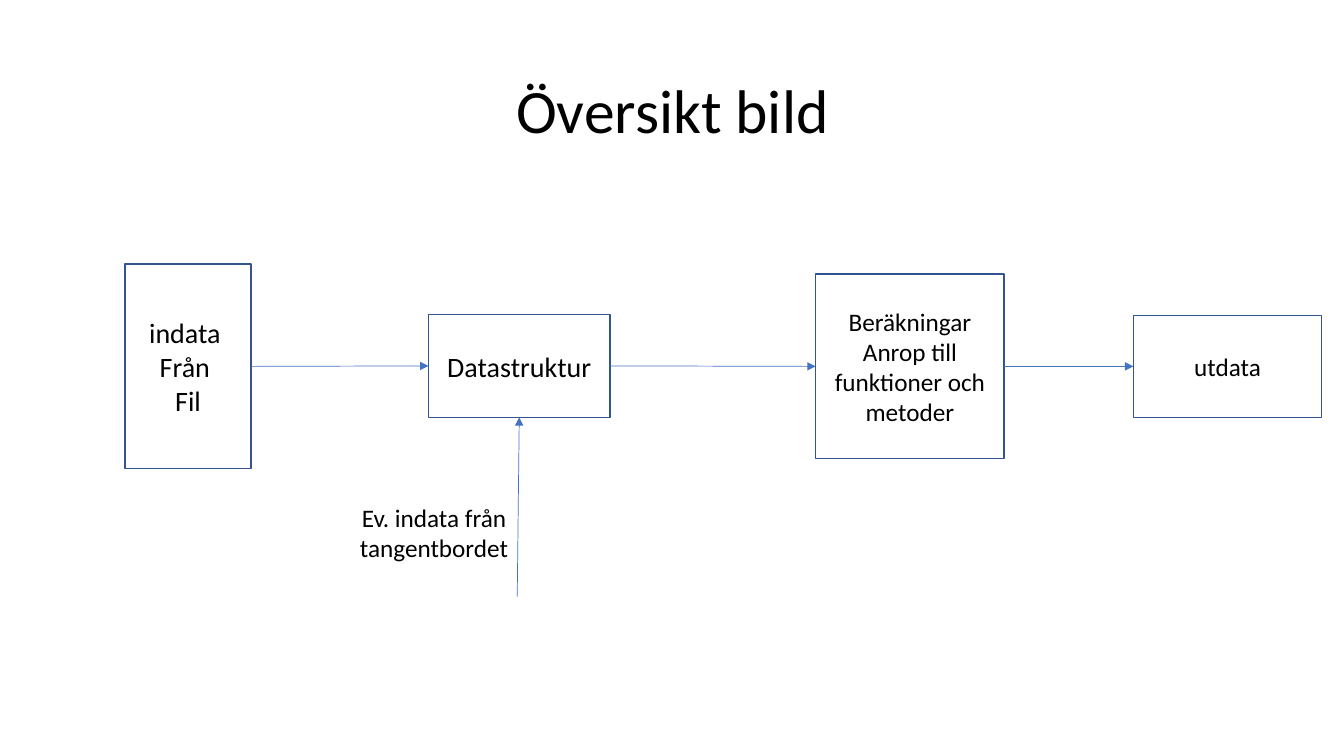
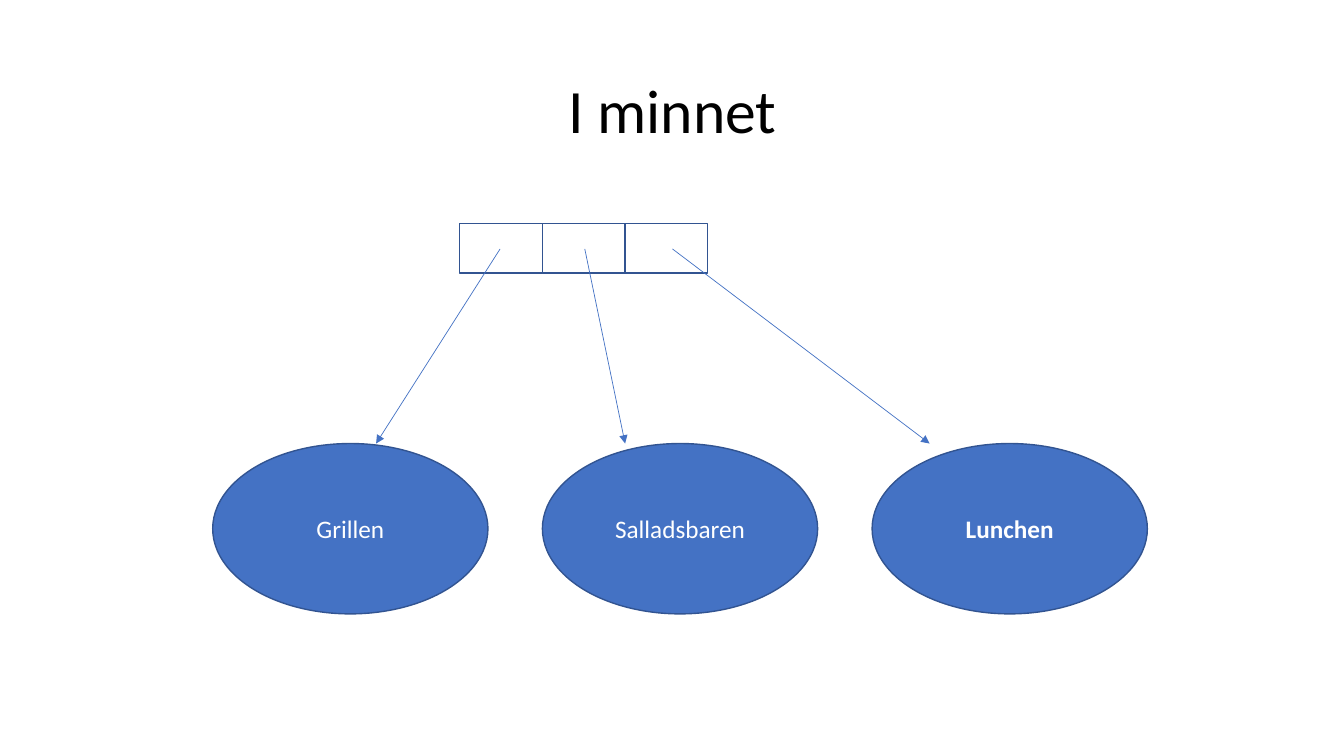
from dataclasses import dataclass
from typing import Any, Optional

import pptx
import pptx.dml.color
import pptx.enum.shapes
import pptx.enum.text
import pptx.oxml.ns
import pptx.util
from lxml import etree

# Shared scale, colours and font
PX = 9144  # 100 px to the inch
FONT = "Calibri"
BLACK, WHITE = "000000", "FFFFFF"
BLUE, NAVY = "4472C4", "325491"
RECT = pptx.enum.shapes.MSO_SHAPE.RECTANGLE
OVAL = pptx.enum.shapes.MSO_SHAPE.OVAL
LEFT_SITE, BOTTOM_SITE, RIGHT_SITE = 1, 2, 3


@dataclass(frozen=True)
class Node:
    x: int
    y: int
    w: int
    h: int
    text: str = ""
    size: int = 18
    bold: bool = False
    kind: Any = RECT
    fill: Optional[str] = None
    color: str = BLACK


def px(n: int) -> pptx.util.Emu:
    return pptx.util.Emu(n * PX)


def rgb(color: str) -> pptx.dml.color.RGBColor:
    return pptx.dml.color.RGBColor.from_string(color)


def format_text(tf: Any, size: int, color: str, bold: bool = False) -> None:
    tf.word_wrap = True
    tf.vertical_anchor = pptx.enum.text.MSO_ANCHOR.MIDDLE
    for p in tf.paragraphs:
        p.alignment = pptx.enum.text.PP_ALIGN.CENTER
        for r in p.runs:
            r.font.name = FONT
            r.font.size = pptx.util.Pt(size)
            r.font.bold = bold
            r.font.color.rgb = rgb(color)


def add_titled_slide(prs: Any, title: str) -> Any:
    s = prs.slides.add_slide(prs.slide_layouts[5])
    sp = s.shapes.title
    sp.left, sp.top, sp.width, sp.height = map(px, (92, 40, 1150, 145))
    sp.text_frame.text = title
    format_text(sp.text_frame, 44, BLACK)
    sp.text_frame.paragraphs[0].line_spacing = 0.9
    return s


def add_node(s: Any, node: Node) -> Any:
    sp = s.shapes.add_shape(node.kind, px(node.x), px(node.y), px(node.w), px(node.h))
    sp.shadow.inherit = False
    if node.fill:
        sp.fill.solid()
        sp.fill.fore_color.rgb = rgb(node.fill)
    else:
        sp.fill.background()
    sp.line.color.rgb = rgb(NAVY)
    sp.line.width = pptx.util.Pt(1)
    sp.text_frame.text = node.text
    format_text(sp.text_frame, node.size, node.color, node.bold)
    return sp


def add_arrow(s: Any, x1: int = 0, y1: int = 0, x2: int = 0, y2: int = 0) -> Any:
    straight = pptx.enum.shapes.MSO_CONNECTOR.STRAIGHT
    line = s.shapes.add_connector(straight, px(x1), px(y1), px(x2), px(y2))
    line.line.color.rgb = rgb(BLUE)
    line.line.width = pptx.util.Pt(0.5)
    qn = pptx.oxml.ns.qn
    etree.SubElement(line.line._get_or_add_ln(), qn("a:tailEnd"), type="triangle")
    etree.SubElement(line._element.spPr, qn("a:effectLst"))
    return line


def build_overview(prs: Any) -> None:
    s = add_titled_slide(prs, "Översikt bild")

    # Boxes of the flow, left to right
    flow = [
        Node(124, 262, 125, 203, "indata \nFrån \nFil", 20),
        Node(425, 312, 180, 102, "Datastruktur", 20),
        Node(809, 272, 187, 183, "Beräkningar\nAnrop till funktioner och metoder"),
        Node(1124, 313, 187, 101, "utdata"),
    ]
    boxes = [add_node(s, node) for node in flow]
    for a, b in zip(boxes, boxes[1:]):
        arrow = add_arrow(s)
        arrow.begin_connect(a, RIGHT_SITE)
        arrow.end_connect(b, LEFT_SITE)

    # Keyboard input from below
    tb = s.shapes.add_textbox(px(337), px(478), px(187), px(101))
    tb.text_frame.text = "Ev. indata från tangentbordet"
    format_text(tb.text_frame, 18, BLACK)
    add_arrow(s, 513, 592, 515, 414).end_connect(boxes[1], BOTTOM_SITE)


def build_memory(prs: Any) -> None:
    s = add_titled_slide(prs, "I minnet")
    cells = [Node(456 + 82 * i, 222, 82, 49) for i in range(3)]
    names = [("Grillen", False), ("Salladsbaren", False), ("Lunchen", True)]
    objects = [
        Node(211 + 327 * i, 440, 273, 169, name, bold=bold,
             kind=OVAL, fill=BLUE, color=WHITE)
        for i, (name, bold) in enumerate(names)
    ]
    for node in cells + objects:
        add_node(s, node)

    # References from the list cells to the objects
    for x1, x2 in ((496, 373), (580, 620), (667, 922)):
        add_arrow(s, x1, 247, x2, objects[0].y)


def main() -> None:
    prs = pptx.Presentation()
    prs.slide_width, prs.slide_height = px(1333), px(750)
    build_overview(prs)
    build_memory(prs)
    prs.save("out.pptx")


if __name__ == "__main__":
    main()
